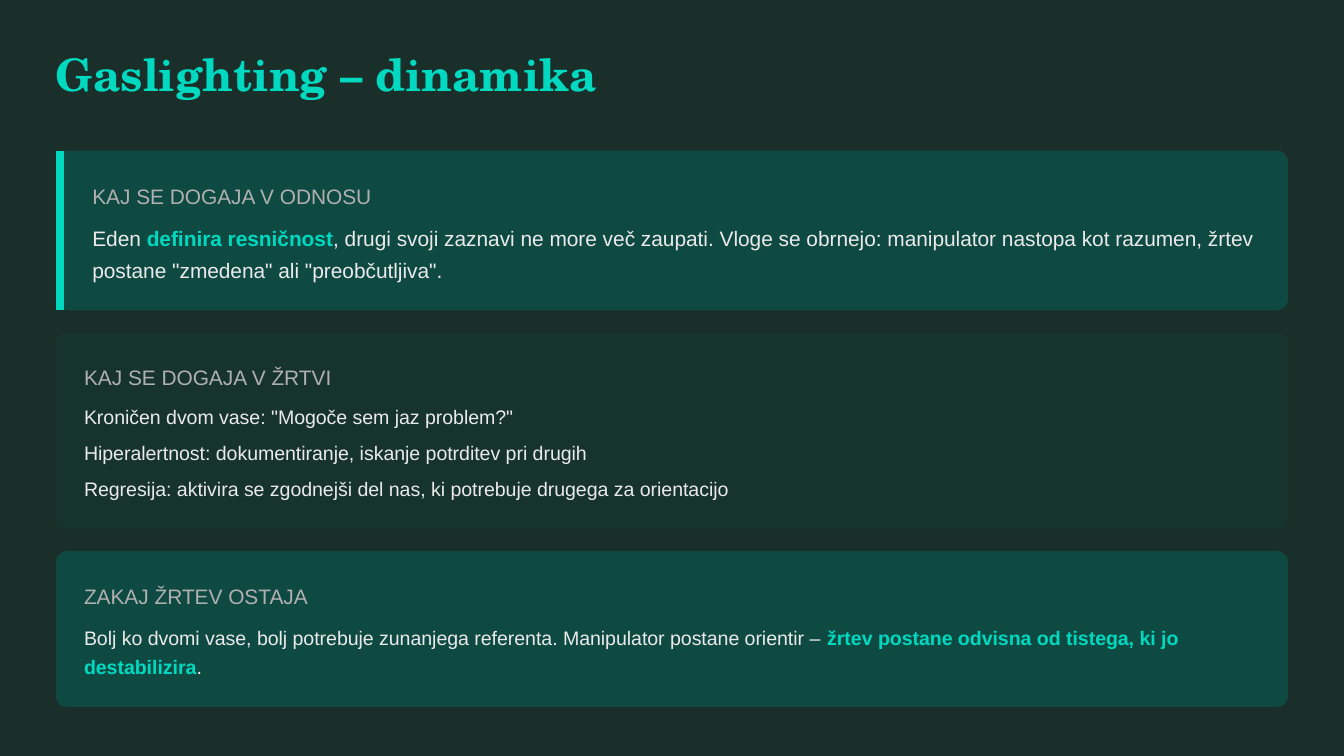
import pptx
import pptx.dml.color
import pptx.enum.shapes
import pptx.enum.text
import pptx.oxml
import pptx.oxml.ns
import pptx.util

Pt = pptx.util.Pt
RGBColor = pptx.dml.color.RGBColor

BACKGROUND = RGBColor(0x1A, 0x2E, 0x2A)
CARD_STRONG = RGBColor(0x0F, 0x4A, 0x42)
CARD_QUIET = RGBColor(0x16, 0x33, 0x2E)
ACCENT = RGBColor(0x00, 0xD9, 0xC0)
LIGHT = RGBColor(0xEA, 0xEA, 0xEA)
MUTED = RGBColor(0xB0, 0xB0, 0xB0)

MARGIN = 30
CARD_WIDTH = 660
CARD_GAP = 12
CARDS_TOP = 80.75
RADIUS = 6
PADDING = 15
BODY_OFFSET = 36.75
BAR = 4.5

# Each body paragraph is a list of (text, is_key_phrase) runs.
CARDS = [
    dict(heading="KAJ SE DOGAJA V ODNOSU", height=85.5, fill=CARD_STRONG,
         size=11.2, spacing=16.9, bar=True, body=[[
             ("Eden ", False),
             ("definira resničnost", True),
             (", drugi svoji zaznavi ne more več zaupati. Vloge se obrnejo: "
              "manipulator nastopa kot razumen, žrtev postane \"zmedena\" ali "
              "\"preobčutljiva\".", False)]]),
    dict(heading="KAJ SE DOGAJA V ŽRTVI", height=105, fill=CARD_QUIET,
         size=10.5, spacing=14.7, bar=False, body=[
             [("Kroničen dvom vase: \"Mogoče sem jaz problem?\"", False)],
             [("Hiperalertnost: dokumentiranje, iskanje potrditev pri drugih", False)],
             [("Regresija: aktivira se zgodnejši del nas, ki potrebuje drugega "
               "za orientacijo", False)]]),
    dict(heading="ZAKAJ ŽRTEV OSTAJA", height=83.5, fill=CARD_STRONG,
         size=10.5, spacing=15.8, bar=False, body=[[
             ("Bolj ko dvomi vase, bolj potrebuje zunanjega referenta. "
              "Manipulator postane orientir – ", False),
             ("žrtev postane odvisna od tistega, ki jo destabilizira", True),
             (".", False)]]),
]


def prepare_frame(box):
    frame = box.text_frame
    frame.word_wrap = True
    frame.auto_size = pptx.enum.text.MSO_AUTO_SIZE.NONE
    frame.vertical_anchor = pptx.enum.text.MSO_ANCHOR.TOP
    frame.margin_left = frame.margin_top = Pt(0)
    frame.margin_right = frame.margin_bottom = Pt(0)
    return frame


def add_span(para, text, size, color, bold=False, font="Arial"):
    span = para.add_run()
    span.text = text
    span.font.name = font
    span.font.size = Pt(size)
    span.font.bold = bold
    span.font.color.rgb = color


def add_text(page, left, top, width, height):
    return prepare_frame(page.shapes.add_textbox(
        Pt(left), Pt(top), Pt(width), Pt(height)))


def add_title(page, left, top, width, height):
    title = page.shapes.title
    title.left, title.top = Pt(left), Pt(top)
    title.width, title.height = Pt(width), Pt(height)
    para = prepare_frame(title).paragraphs[0]
    para.alignment = pptx.enum.text.PP_ALIGN.LEFT
    para.line_spacing = Pt(24)
    add_span(para, "Gaslighting – dinamika", 24, ACCENT, True, "TeX Gyre Schola")


def add_bar(page, left, top, height):
    center = left + BAR / 2
    bar = page.shapes.add_connector(
        pptx.enum.shapes.MSO_CONNECTOR.STRAIGHT,
        Pt(center), Pt(top), Pt(center), Pt(top + height))
    bar.line.color.rgb = ACCENT
    bar.line.width = Pt(BAR)
    bar._element.spPr.append(
        pptx.oxml.parse_xml(f"<a:effectLst {pptx.oxml.ns.nsdecls('a')}/>"))


def add_card(page, card, left, top, width, height):
    # Panel
    panel = page.shapes.add_shape(
        pptx.enum.shapes.MSO_SHAPE.ROUNDED_RECTANGLE,
        Pt(left), Pt(top), Pt(width), Pt(height))
    panel.adjustments[0] = RADIUS / height
    panel.shadow.inherit = False
    panel.fill.solid()
    panel.fill.fore_color.rgb = card["fill"]
    panel.line.fill.background()

    text_left = left + PADDING
    if card["bar"]:
        add_bar(page, left, top, height)
        text_left += BAR
    text_width = left + width - 2.25 - text_left

    # Heading
    para = add_text(page, text_left, top + PADDING, text_width, 15.8).paragraphs[0]
    para.line_spacing = Pt(15.8)
    add_span(para, card["heading"], 11.2, MUTED)

    # Body
    frame = add_text(page, text_left, top + BODY_OFFSET, text_width,
                     height - BODY_OFFSET - PADDING)
    for index, spans in enumerate(card["body"]):
        para = frame.add_paragraph() if index else frame.paragraphs[0]
        para.line_spacing = Pt(card["spacing"])
        if index:
            para.space_before = Pt(4.5)
        for text, is_key in spans:
            add_span(para, text, card["size"], ACCENT if is_key else LIGHT, is_key)


def main():
    deck = pptx.Presentation()
    deck.slide_width, deck.slide_height = Pt(720), Pt(405)
    page = deck.slides.add_slide(deck.slide_layouts.get_by_name("Title Only"))
    page.background.fill.solid()
    page.background.fill.fore_color.rgb = BACKGROUND

    add_title(page, MARGIN, MARGIN, 338, 24)
    top = CARDS_TOP
    for card in CARDS:
        add_card(page, card, MARGIN, top, CARD_WIDTH, card["height"])
        top += card["height"] + CARD_GAP

    deck.save("out.pptx")


if __name__ == "__main__":
    main()
